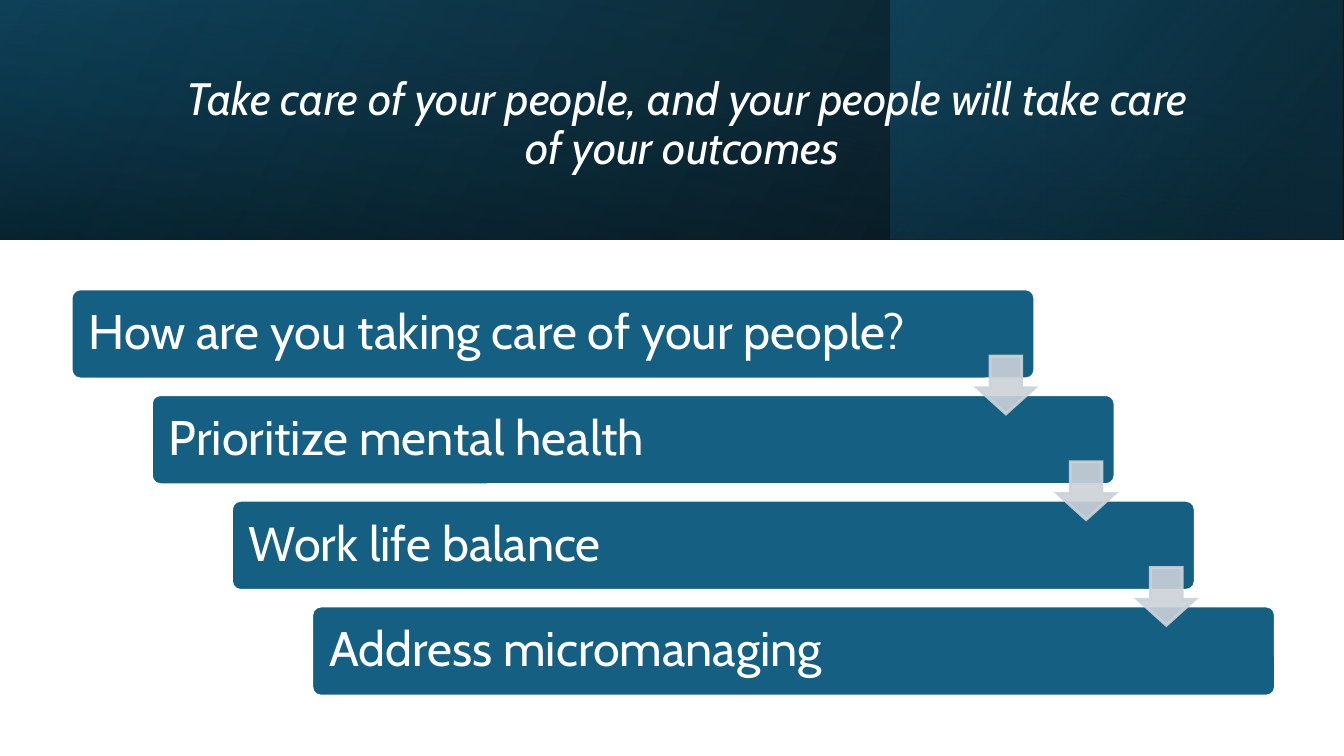
from dataclasses import dataclass

from lxml import etree
from pptx import Presentation
from pptx.dml.color import RGBColor
from pptx.enum.shapes import MSO_SHAPE
from pptx.enum.text import MSO_ANCHOR, PP_ALIGN
from pptx.oxml.ns import qn
from pptx.util import Inches, Pt

RECT, CARD, ARROW = MSO_SHAPE.RECTANGLE, MSO_SHAPE.ROUNDED_RECTANGLE, MSO_SHAPE.DOWN_ARROW
MIDDLE = MSO_ANCHOR.MIDDLE
LEFT, CENTER = PP_ALIGN.LEFT, PP_ALIGN.CENTER


@dataclass(frozen=True)
class Theme:
    font: str = "Cabin"
    white: RGBColor = RGBColor.from_string("FFFFFF")
    black: RGBColor = RGBColor.from_string("000000")
    navy: RGBColor = RGBColor.from_string("104862")
    deep: RGBColor = RGBColor.from_string("0B3041")
    teal: RGBColor = RGBColor.from_string("156082")
    arrow: RGBColor = RGBColor.from_string("CCD2D8")
    title_size: float = 24.3
    card_size: float = 26
    outline: float = 1.5


THEME = Theme()


def set_opacity(shape, percents):
    """Apply one opacity to each colour of the shape, in document order."""
    for color, percent in zip(shape._element.spPr.iter(qn("a:srgbClr")), percents):
        etree.SubElement(color, qn("a:alpha"), val=str(percent * 1000))


def write(frame, text, size, align):
    frame.word_wrap = True
    frame.vertical_anchor = MIDDLE
    frame.text = text
    paragraph = frame.paragraphs[0]
    paragraph.alignment = align
    paragraph.line_spacing = 0.9
    font = paragraph.runs[0].font
    font.name, font.size = THEME.font, Pt(size)
    font.color.rgb = THEME.white
    return font


prs = Presentation()
prs.slide_width = Inches(10)
prs.slide_height = Inches(10 * 9 / 16)
slide = prs.slides.add_slide(prs.slide_layouts[6])
shapes = slide.shapes

# Header band: three layered gradients (position %, color, opacity %)
BAND_H = 1.78
band_layers = [
    ((0, 0, 10, BAND_H), 0, 330, [(0, THEME.black, 96), (100, THEME.navy, 100)]),
    ((6.63, 0, 3.36, BAND_H), 0, 320, [(19, THEME.deep, 68), (100, THEME.teal, 48)]),
    ((4.11, -4.11, BAND_H, 10), 270, 350, [(23, THEME.navy, 16), (99, THEME.black, 45)]),
]
for box, rotation, angle, stops in band_layers:
    layer = shapes.add_shape(RECT, *map(Inches, box))
    layer.shadow.inherit = False
    layer.rotation = rotation
    layer._element.spPr.xfrm.set("flipH", "1")
    layer.line.fill.background()
    layer.fill.gradient()
    layer.fill.gradient_angle = 360 - angle  # python-pptx counts counter-clockwise
    for stop, (position, color, _) in zip(layer.fill.gradient_stops, stops):
        stop.position = position / 100
        stop.color.rgb = color
    set_opacity(layer, [opacity for _, _, opacity in stops])

title = shapes.add_textbox(Inches(1.13), Inches(0.29), Inches(7.97), Inches(1.29))
title_font = write(
    title.text_frame,
    "Take care of your people, and your people will take care of your outcomes ",
    THEME.title_size,
    CENTER,
)
title_font.italic = True

# Staircase of cards, each stepping right and down
steps = [
    "How are you taking care of your people?",
    "Prioritize mental health",
    "Work life balance",
    "Address micromanaging",
]
CARD_W, CARD_H = 7.17, 0.67
FIRST_X, FIRST_Y = 0.53, 2.15
LAST_X, LAST_Y = 2.32, 4.51
step_x = (LAST_X - FIRST_X) / (len(steps) - 1)
step_y = (LAST_Y - FIRST_Y) / (len(steps) - 1)
corners = [(FIRST_X + i * step_x, FIRST_Y + i * step_y) for i in range(len(steps))]

for (x, y), step in zip(corners, steps):
    card = shapes.add_shape(CARD, Inches(x), Inches(y), Inches(CARD_W), Inches(CARD_H))
    card.adjustments[0] = 0.1
    card.shadow.inherit = False
    card.fill.solid()
    card.fill.fore_color.rgb = THEME.teal
    card.line.color.rgb = THEME.white
    card.line.width = Pt(THEME.outline)
    card.text_frame.margin_left = Inches(0.11)
    write(card.text_frame, step, THEME.card_size, LEFT)

# Arrows sit at the right end of each card and reach into the next one
ARROW_SIZE = 0.43
for x, y in corners[:-1]:
    arrow = shapes.add_shape(
        ARROW,
        Inches(x + CARD_W - ARROW_SIZE),
        Inches(y + 0.5),
        Inches(ARROW_SIZE),
        Inches(ARROW_SIZE),
    )
    arrow.adjustments[0], arrow.adjustments[1] = 0.55, 0.45
    arrow.shadow.inherit = False
    arrow.fill.solid()
    arrow.fill.fore_color.rgb = THEME.arrow
    arrow.line.color.rgb = THEME.arrow
    arrow.line.width = Pt(THEME.outline)
    etree.SubElement(arrow.line._get_or_add_ln(), qn("a:miter"), lim="800000")
    set_opacity(arrow, [90, 90])

prs.save("out.pptx")
